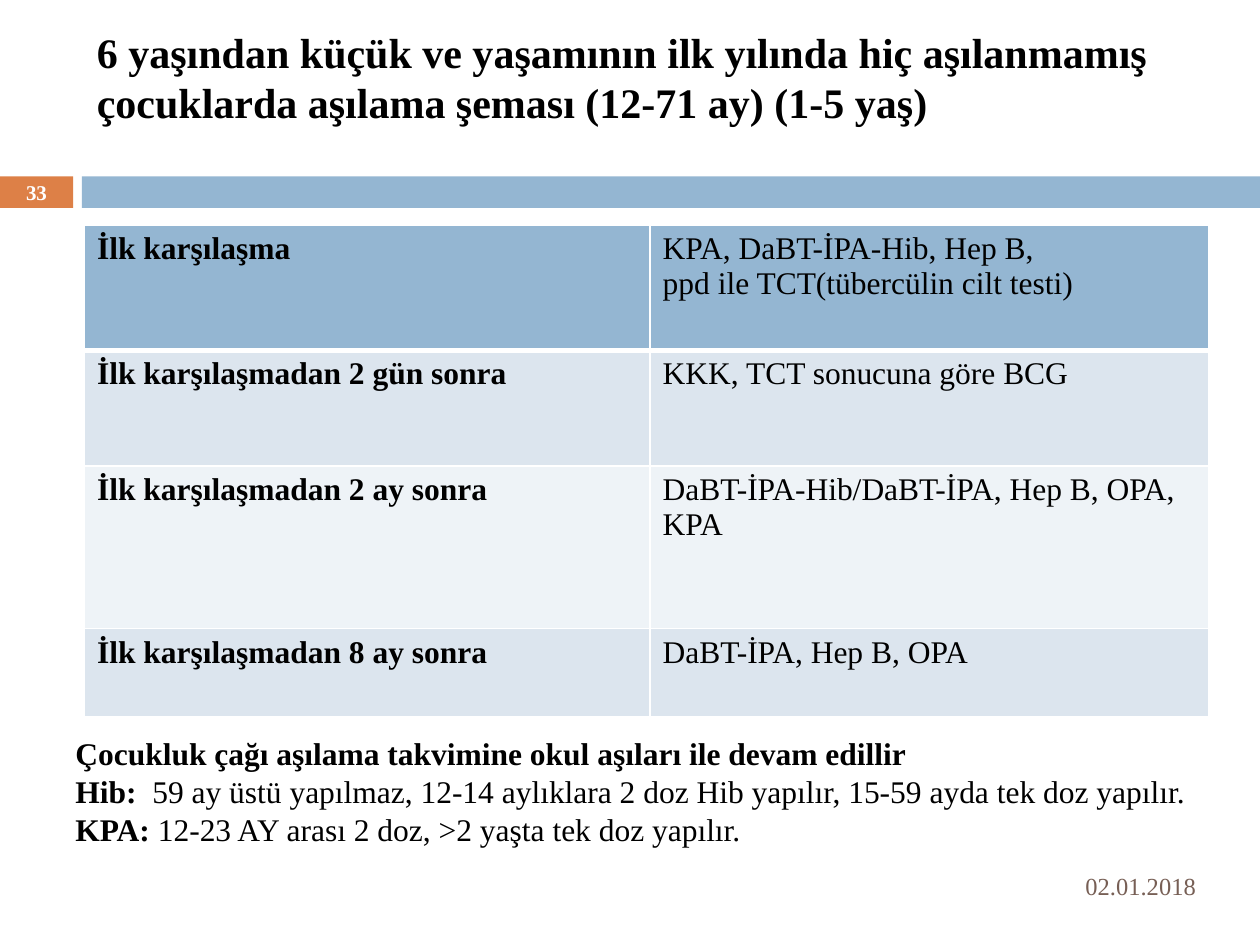
from pptx import Presentation
from pptx.dml.color import RGBColor as Color
from pptx.enum.shapes import MSO_SHAPE as Shape
from pptx.enum.text import MSO_ANCHOR as Anchor, PP_ALIGN as Align
from pptx.oxml import parse_xml
from pptx.oxml.ns import nsdecls
from pptx.util import Inches, Pt

TITLE = [
    [("6 yaşından küçük ve yaşamının ilk yılında hiç aşılanmamış\v"
      "çocuklarda aşılama şeması (12-71 ay) (1-5 yaş)", True)],
]
SCHEDULE = [
    ("İlk karşılaşma", ["KPA, DaBT-İPA-Hib, Hep B,", "ppd ile TCT(tübercülin cilt testi)"]),
    ("İlk karşılaşmadan 2 gün sonra", ["KKK, TCT sonucuna göre BCG"]),
    ("İlk karşılaşmadan 2 ay sonra", ["DaBT-İPA-Hib/DaBT-İPA, Hep B, OPA, KPA"]),
    ("İlk karşılaşmadan 8 ay sonra", ["DaBT-İPA, Hep B, OPA"]),
]
NOTES = [
    [("Çocukluk çağı aşılama takvimine okul aşıları ile devam edillir", True)],
    [("Hib:  ", True),
     ("59 ay üstü yapılmaz, 12-14 aylıklara 2 doz Hib yapılır, 15-59 ayda tek doz yapılır.", False)],
    [("KPA: ", True), ("12-23 AY arası 2 doz, >2 yaşta tek doz yapılır.", False)],
]
DATE = [[("02.01.2018", False)]]
NUMBER = [[("33", True)]]

THEME = {
    "font": "Times New Roman",
    "black": "000000", "white": "FFFFFF", "brown": "775F55",
    "orange": "DD8047", "blue": "94B6D2", "bands": ("DCE5EE", "EEF3F7"),
    "title": 24, "body": 18, "date": 14, "number": 12,
}
WIDTH, HEIGHT = 10, 7.5
LEFT, CONTENT_WIDTH = 0.67, 8.92
BAR_TOP, BAR_HEIGHT, TAB_WIDTH, BAR_LEFT = 1.4, 0.25, 0.58, 0.65
COLUMNS = (4.49, 4.43)
ROWS = (0.99, 0.92, 1.29, 0.7)


def inches(*lengths):
    return [Inches(length) for length in lengths]


def apply(target, values):
    for name, value in values.items():
        setattr(target, name, value)


def write(frame, paragraphs, size="body", color="black", align=Align.LEFT, **frame_format):
    apply(frame, {"word_wrap": True, **frame_format})
    for index, runs in enumerate(paragraphs):
        paragraph = frame.add_paragraph() if index else frame.paragraphs[0]
        paragraph.alignment = align
        for text, bold in runs:
            first, *rest = text.split("\v")
            pieces = [first, *rest]
            for order, piece in enumerate(pieces):
                if order:
                    paragraph.add_line_break()
                run = paragraph.add_run()
                run.text = piece
                apply(run.font, {"name": THEME["font"], "size": Pt(THEME[size]), "bold": bold})
                run.font.color.rgb = Color.from_string(THEME[color])


def add_text(slide, box, paragraphs, **text_format):
    write(slide.shapes.add_textbox(*inches(*box)).text_frame, paragraphs, **text_format)


def add_bar(slide, left, width, color):
    bar = slide.shapes.add_shape(Shape.RECTANGLE, *inches(left, BAR_TOP, width, BAR_HEIGHT))
    bar.shadow.inherit = False
    bar.fill.solid()
    bar.fill.fore_color.rgb = Color.from_string(THEME[color])
    bar.line.fill.background()


def add_borders(cell, widths):
    properties = cell._tc.get_or_add_tcPr()
    for side, points in widths.items():
        properties.append(parse_xml(
            f'<a:ln{side} {nsdecls("a")} w="{Pt(points)}"><a:solidFill>'
            f'<a:srgbClr val="{THEME["white"]}"/></a:solidFill></a:ln{side}>'))


def add_schedule(slide):
    table = slide.shapes.add_table(
        len(ROWS), len(COLUMNS), *inches(LEFT, 1.79, CONTENT_WIDTH, sum(ROWS))).table
    for column, width in zip(table.columns, COLUMNS):
        column.width = Inches(width)
    for index, (visit, vaccines) in enumerate(SCHEDULE):
        table.rows[index].height = Inches(ROWS[index])
        fill = THEME["bands"][(index - 1) % 2] if index else THEME["blue"]
        borders = {"L": 1, "R": 1, "T": 1 if index != 1 else 3, "B": 1 if index else 3}
        contents = ([[(visit, True)]], [[(line, False)] for line in vaccines])
        for cell, paragraphs in zip(table.rows[index].cells, contents):
            add_borders(cell, borders)
            cell.fill.solid()
            cell.fill.fore_color.rgb = Color.from_string(fill)
            write(cell.text_frame, paragraphs)


def main():
    presentation = Presentation()
    apply(presentation, {"slide_width": Inches(WIDTH), "slide_height": Inches(HEIGHT)})
    slide = presentation.slides.add_slide(presentation.slide_layouts[6])
    add_bar(slide, 0, TAB_WIDTH, "orange")
    add_bar(slide, BAR_LEFT, WIDTH - BAR_LEFT, "blue")
    add_text(slide, (LEFT, 0.21, CONTENT_WIDTH, 1.08), TITLE, size="title", margin_top=0)
    add_text(slide, (LEFT + CONTENT_WIDTH - 2.92, 6.83, 2.92, 0.4), DATE, size="date",
             color="brown", align=Align.RIGHT, vertical_anchor=Anchor.MIDDLE)
    add_text(slide, (0, BAR_TOP, TAB_WIDTH, BAR_HEIGHT), NUMBER, size="number", color="white",
             align=Align.CENTER, vertical_anchor=Anchor.MIDDLE, margin_top=0, margin_bottom=0)
    add_schedule(slide)
    add_text(slide, (0.5, 5.78, WIDTH - 0.5, 1.31), NOTES)
    presentation.save("out.pptx")


if __name__ == "__main__":
    main()
